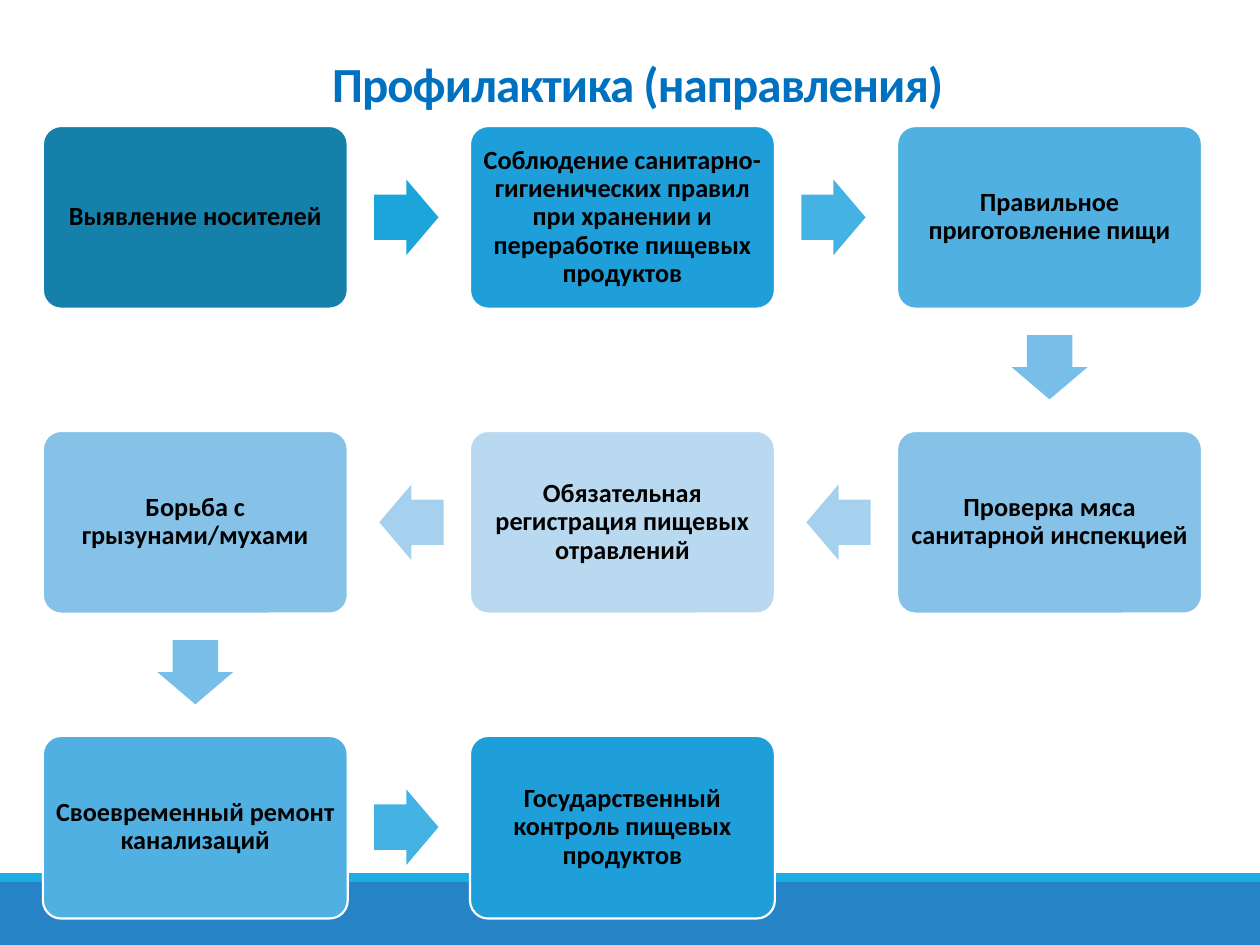
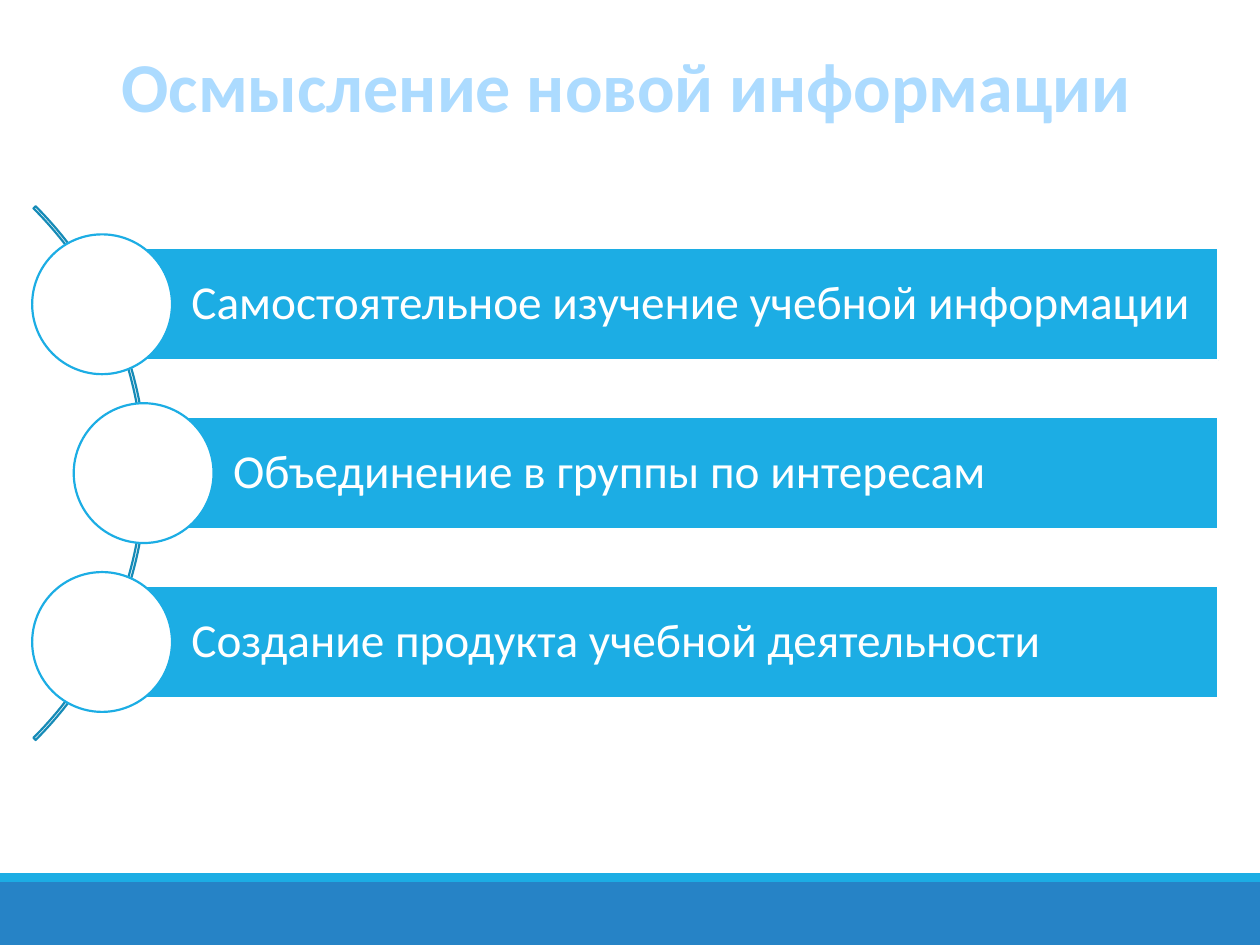
from pptx import Presentation
from pptx.dml.color import RGBColor
from pptx.enum.shapes import MSO_SHAPE
from pptx.enum.text import MSO_ANCHOR, PP_ALIGN
from pptx.util import Inches, Pt

RECT, ROUNDED = MSO_SHAPE.RECTANGLE, MSO_SHAPE.ROUNDED_RECTANGLE
ARROW, OVAL, ARC = MSO_SHAPE.RIGHT_ARROW, MSO_SHAPE.OVAL, MSO_SHAPE.BLOCK_ARC
TOP, MIDDLE, BOTTOM = MSO_ANCHOR.TOP, MSO_ANCHOR.MIDDLE, MSO_ANCHOR.BOTTOM
LEFT, CENTER = PP_ALIGN.LEFT, PP_ALIGN.CENTER

FONT = "Calibri"
WHITE, BLACK = "FFFFFF", "000000"
CYAN, BLUE, TEAL = "1CADE4", "2683C6", "168BB7"
TITLE_BLUE, PALE_BLUE = "0070C0", "ACDBFF"

MEASURES = [
    ("Выявление носителей", "1580A9"),
    ("Соблюдение санитарно-гигиенических правил при хранении и переработке пищевых продуктов", "1F9FD9"),
    ("Правильное приготовление пищи", "51B0E2"),
    ("Проверка мяса санитарной инспекцией", "86C2E8"),
    ("Обязательная регистрация пищевых отравлений", "B9D9F0"),
    ("Борьба с грызунами/мухами", "86C2E8"),
    ("Своевременный ремонт канализаций", "51B0E2"),
    ("Государственный контроль пищевых продуктов", "1F9FD9"),
]
ARROW_COLORS = ["1BA5DA", "45B2E4", "77BFE9", "A6D1EE", "A6D1EE", "77BFE9", "45B2E4"]
ACTIVITIES = [
    ("Самостоятельное изучение учебной информации", 0.81),
    ("Объединение в группы по интересам", 1.14),
    ("Создание продукта учебной деятельности", 0.81),
]


def rgb(value):
    """Turn a hex string into a colour."""
    return RGBColor.from_string(value)


def write(frame, text, size, color, bold=False, align=LEFT, anchor=MIDDLE,
          spacing=1.0, tracking=0, margins=(0.1, 0.05, 0.1, 0.05), wrap=True):
    """Put one formatted paragraph into a text frame."""
    frame.word_wrap = wrap
    frame.vertical_anchor = anchor
    (frame.margin_left, frame.margin_top,
     frame.margin_right, frame.margin_bottom) = map(Inches, margins)
    paragraph = frame.paragraphs[0]
    paragraph.alignment = align
    paragraph.line_spacing = spacing
    run = paragraph.add_run()
    run.text = text
    run.font.name = FONT
    run.font.size = Pt(size)
    run.font.bold = bold
    run.font.color.rgb = rgb(color)
    if tracking:
        run.font._element.set("spc", str(int(tracking * 100)))


class Deck:
    """Holds the presentation, its style and the current slide."""

    def __init__(self):
        """Start a 10 by 7.5 inch presentation."""
        self.presentation = Presentation()
        self.presentation.slide_width = Inches(10)
        self.presentation.slide_height = Inches(7.5)
        self.slide = None

    def new_slide(self):
        """Add a blank slide with the two bottom bands."""
        self.slide = self.presentation.slides.add_slide(self.presentation.slide_layouts[6])
        self.shape(RECT, 0, 7, 10, 0.5, BLUE)
        self.shape(RECT, 0, 6.93, 10, 0.07, CYAN)

    def shape(self, preset, left, top, width, height, fill=None, line=None, adjustments=()):
        """Add a preset shape without a shadow."""
        figure = self.slide.shapes.add_shape(
            preset, Inches(left), Inches(top), Inches(width), Inches(height))
        figure.shadow.inherit = False
        for index, value in enumerate(adjustments):
            figure.adjustments[index] = value
        if fill:
            figure.fill.solid()
            figure.fill.fore_color.rgb = rgb(fill)
        else:
            figure.fill.background()
        if line:
            figure.line.color.rgb = rgb(line)
            figure.line.width = Pt(1.25)
        else:
            figure.line.fill.background()
        return figure

    def title(self, text, left, top, width, height, **style):
        """Add a bold centred title."""
        box = self.slide.shapes.add_textbox(
            Inches(left), Inches(top), Inches(width), Inches(height))
        write(box.text_frame, text, bold=True, align=CENTER, **style)

    def card(self, text, left, top, width, height, fill):
        """Add a rounded card with a bold caption."""
        card = self.shape(ROUNDED, left, top, width, height, fill, WHITE, [0.1])
        write(card.text_frame, text, 15, BLACK, bold=True, align=CENTER,
              spacing=0.9, margins=[0.06] * 4)

    def arrow(self, center_x, center_y, rotation, fill):
        """Add a block arrow around a centre point."""
        width, height = 0.51, 0.6
        arrow = self.shape(ARROW, center_x - width / 2, center_y - height / 2,
                           width, height, fill, adjustments=[0.6, 0.5])
        arrow.rotation = rotation

    def bar(self, text, left, top, height):
        """Add a labelled bar with a circle centred on its left end."""
        right, diameter = 9.67, 1.11
        bar = self.shape(RECT, left, top, right - left, height, CYAN, WHITE)
        write(bar.text_frame, text, 27, WHITE, spacing=0.9, margins=(0.71, 0.07, 0.07, 0.07))
        self.shape(OVAL, left - diameter / 2, top + (height - diameter) / 2,
                   diameter, diameter, WHITE, CYAN)


def prevention_slide(deck):
    """Lay the measures out as a snake of cards joined by arrows."""
    deck.new_slide()
    deck.title("Профилактика (направления)", 1.22, 0.44, 7.68, 0.5, size=28,
               color=TITLE_BLUE, anchor=BOTTOM, spacing=0.85, tracking=-0.5)
    columns, width, height, setback = 3, 2.42, 1.45, 0.02
    previous = None
    for step, (text, fill) in enumerate(MEASURES):
        row, offset = divmod(step, columns)
        leftward = row % 2 == 1
        column = columns - 1 - offset if leftward else offset
        left, top = 0.34 + 3.39 * column, 1 + 2.42 * row
        center = left + width / 2, top + height / 2
        if previous:
            rotation = 90 if offset == 0 else 180 if leftward else 0
            shift_x, shift_y = {0: (-setback, 0), 90: (0, -setback), 180: (setback, 0)}[rotation]
            deck.arrow((previous[0] + center[0]) / 2 + shift_x,
                       (previous[1] + center[1]) / 2 + shift_y,
                       rotation, ARROW_COLORS[step - 1])
        deck.card(text, left, top, width, height, fill)
        previous = center


def reflection_slide(deck):
    """List the learning activities along an arc."""
    deck.new_slide()
    deck.title("Осмысление новой информации", 0.82, 0.29, 8.3, 0.77, size=40,
               color=PALE_BLUE, anchor=TOP, wrap=False)
    deck.shape(ARC, -4.83, 0.76, 5.99, 5.99, line=TEAL, adjustments=[189, 27, 0.004])
    for index, (text, left) in enumerate(ACTIVITIES):
        deck.bar(text, left, 1.97 + 1.34 * index, 0.89)


def main():
    """Build both slides and save them."""
    deck = Deck()
    prevention_slide(deck)
    reflection_slide(deck)
    deck.presentation.save("out.pptx")


if __name__ == "__main__":
    main()
